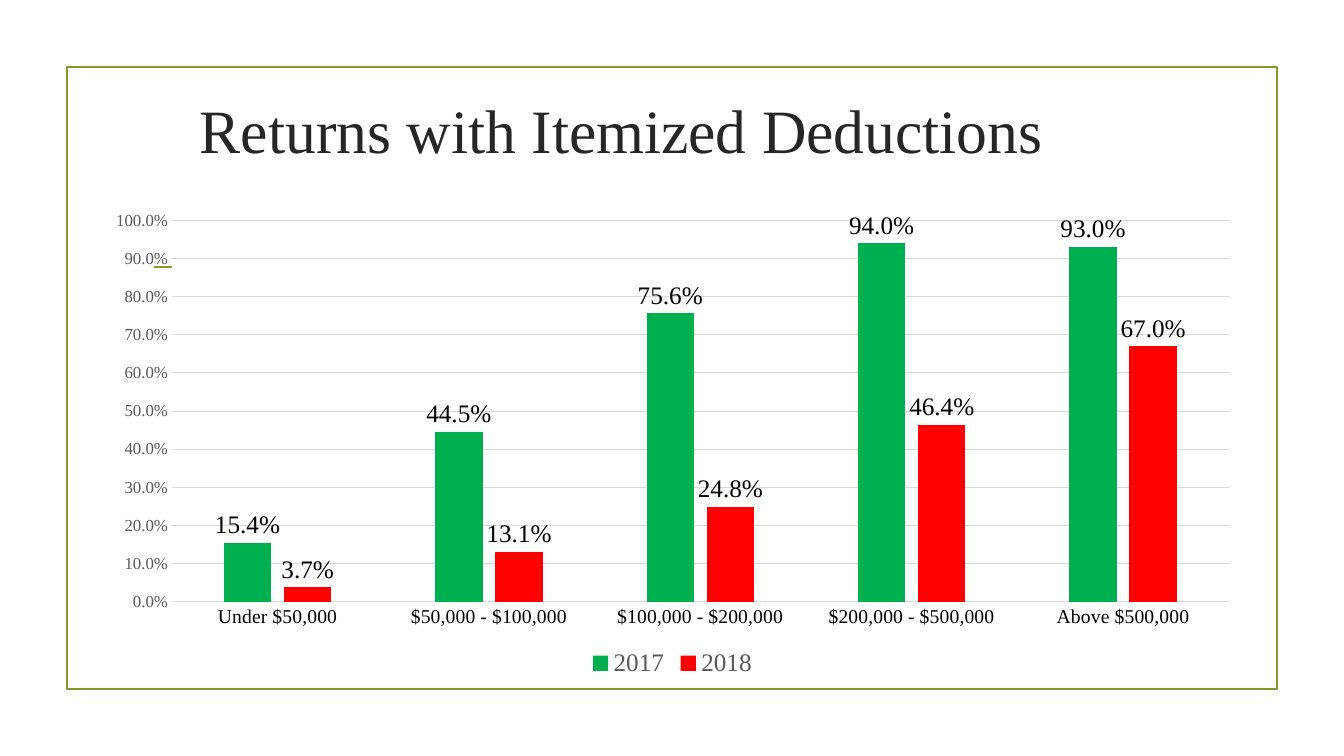
from lxml.etree import SubElement
from pptx import Presentation
from pptx.chart.data import CategoryChartData
from pptx.dml.color import RGBColor
from pptx.enum.chart import (XL_CHART_TYPE, XL_LABEL_POSITION,
                             XL_LEGEND_POSITION, XL_TICK_MARK)
from pptx.enum.shapes import MSO_CONNECTOR, MSO_SHAPE
from pptx.enum.text import MSO_ANCHOR, PP_ALIGN
from pptx.oxml.ns import qn
from pptx.util import Emu, Pt

EMU_PER_PX = 12192000 / 1344
FONT = "Times New Roman"
COLORS = {
    "olive": "83992A", "title": "262626", "black": "000000", "gray": "595959",
    "grid": "D9D9D9", "white": "FFFFFF", "2017": "00B050", "2018": "FF0000",
}
BRACKETS = ["Under $50,000", "$50,000 - $100,000", "$100,000 - $200,000",
            "$200,000 - $500,000", "Above $500,000"]
ITEMIZED_SHARES = {
    "2017": [0.154, 0.445, 0.756, 0.94, 0.93],
    "2018": [0.037, 0.131, 0.248, 0.464, 0.67],
}


def px(*lengths):
    return [Emu(round(length * EMU_PER_PX)) for length in lengths]


def color(name):
    return RGBColor.from_string(COLORS[name])


def set_font(font, size, color_name):
    font.name = FONT
    font.size = Pt(size)
    font.color.rgb = color(color_name)


def set_line(line, color_name, width):
    line.color.rgb = color(color_name)
    line.width = Pt(width)


def set_fill(fill, color_name):
    fill.solid()
    fill.fore_color.rgb = color(color_name)


def add_frame(slide, left, top, width, height):
    """Outline the slide area and rule it below the title."""
    frame = slide.shapes.add_shape(MSO_SHAPE.RECTANGLE, *px(left, top, width, height))
    frame.shadow.inherit = False
    frame.fill.background()
    set_line(frame.line, "olive", 1.25)

    rule_y = top + 200
    rule = slide.shapes.add_connector(
        MSO_CONNECTOR.STRAIGHT, *px(left + 87, rule_y, left + width - 87, rule_y))
    set_line(rule.line, "olive", 1.25)
    SubElement(rule._element.spPr, qn("a:effectLst"))


def add_title(slide, left, top, width, height):
    title = slide.shapes.title
    title.left, title.top, title.width, title.height = px(left, top, width, height)
    title.text_frame.text = "Returns with Itemized Deductions"
    title.text_frame.vertical_anchor = MSO_ANCHOR.MIDDLE
    heading = title.text_frame.paragraphs[0]
    heading.alignment = PP_ALIGN.CENTER
    set_font(heading.font, 44, "title")


def format_axes(chart):
    brackets, shares = chart.category_axis, chart.value_axis
    for axis in (brackets, shares):
        axis.major_tick_mark = axis.minor_tick_mark = XL_TICK_MARK.NONE
    set_font(brackets.tick_labels.font, 14, "black")
    set_line(brackets.format.line, "grid", 0.75)

    set_font(shares.tick_labels.font, 12, "gray")
    shares.tick_labels.number_format = "0.0%"
    shares.tick_labels.number_format_is_linked = False
    shares.minimum_scale, shares.maximum_scale, shares.major_unit = 0, 1, 0.1
    shares.format.line.fill.background()
    set_line(shares.major_gridlines.format.line, "grid", 0.75)


def format_series(series):
    set_fill(series.format.fill, series.name)
    series.invert_if_negative = False
    labels = series.data_labels
    labels.show_value = True
    labels.position = XL_LABEL_POSITION.OUTSIDE_END
    labels.number_format = "0.0%"
    labels.number_format_is_linked = False
    set_font(labels.font, 18, "black")


def add_share_chart(slide, left, top, width, height):
    data = CategoryChartData(number_format="0.0%")
    data.categories = BRACKETS
    for year, shares in ITEMIZED_SHARES.items():
        data.add_series(year, shares)
    chart = slide.shapes.add_chart(
        XL_CHART_TYPE.COLUMN_CLUSTERED, *px(left, top, width, height), data).chart
    chart.has_title = False
    set_font(chart.font, 10, "black")

    plot = chart.plots[0]
    plot.gap_width, plot.overlap = 219, -27
    plot.vary_by_categories = False
    for series in plot.series:
        format_series(series)
    format_axes(chart)

    chart.has_legend = True
    chart.legend.position = XL_LEGEND_POSITION.BOTTOM
    chart.legend.include_in_layout = False
    set_font(chart.legend.font, 18, "gray")

    plot_area = chart._chartSpace.chart.plotArea
    background = SubElement(SubElement(plot_area, qn("c:spPr")), qn("a:solidFill"))
    SubElement(background, qn("a:srgbClr"), val=COLORS["white"])


def main():
    deck = Presentation()
    deck.slide_width, deck.slide_height = px(1344, 756)
    slide = deck.slides.add_slide(deck.slide_layouts[5])
    set_fill(slide.background.fill, "white")
    add_frame(slide, 67, 67, 1210, 622)
    add_title(slide, 93, 57, 1058, 144)
    add_share_chart(slide, 93, 202, 1159, 480)
    deck.save("out.pptx")


if __name__ == "__main__":
    main()
